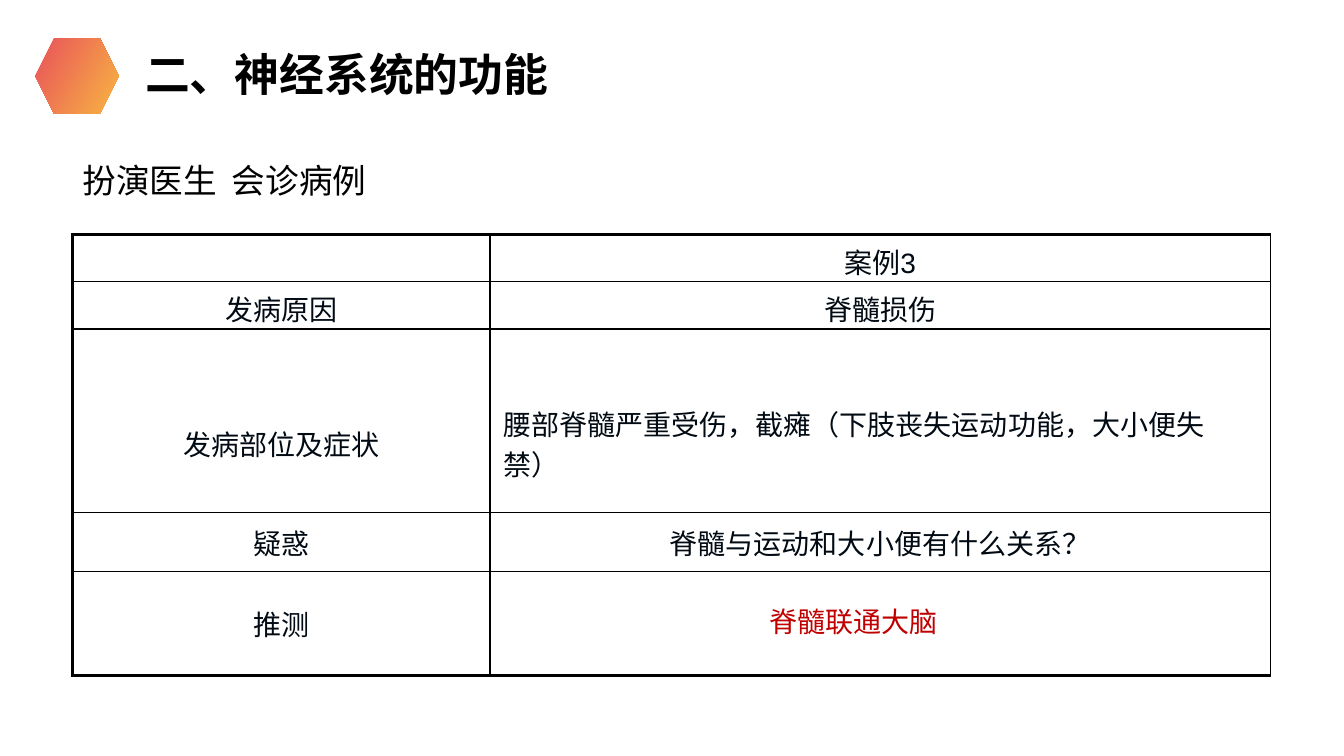
from lxml import etree
from pptx import Presentation
from pptx.dml.color import RGBColor
from pptx.enum.shapes import MSO_SHAPE
from pptx.enum.text import MSO_ANCHOR, PP_ALIGN
from pptx.oxml.ns import qn
from pptx.util import Inches, Pt

CENTER, LEFT = PP_ALIGN.CENTER, PP_ALIGN.LEFT
MIDDLE = MSO_ANCHOR.MIDDLE
HEXAGON = MSO_SHAPE.HEXAGON

FONT = "Arial"
COLORS = {
    "black": "000000",
    "ink": "020B14",
    "red": "C00000",
    "coral": "E8525B",
    "amber": "F8B542",
}
TEXTS = [
    ("二、神经系统的功能", (1.34, 0.41, 4.35, 0.64), 32, "black", True),
    ("扮演医生  会诊病例", (0.72, 1.54, 3.15, 0.5), 24, "black", False),
    ("脊髓联通大脑", (7.53, 5.95, 1.88, 0.5), 20, "red", False),
]
CASE_ROWS = [
    ("", "案例3"),
    ("发病原因", "脊髓损伤"),
    ("发病部位及症状", "腰部脊髓严重受伤，截瘫（下肢丧失运动功能，大小便失禁）"),
    ("疑惑", "脊髓与运动和大小便有什么关系？"),
    ("推测", ""),
]
TABLE_LEFT, TABLE_TOP = 0.72, 2.33
COLUMN_WIDTHS = [4.14, 7.74]
ROW_HEIGHTS = [0.46, 0.47, 1.82, 0.59, 1.03]
ROW_MARGINS = [(0.06, 0), (0.06, 0), (0.5, 0.05), (0.05, 0.05), (0.05, 0.05)]
SYMPTOM_CELL = (2, 1)
THIN, THICK = 1, 2.25


def color(name):
    return RGBColor.from_string(COLORS[name])


def add_run(paragraph, text, size, color_name, bold=False):
    run = paragraph.add_run()
    run.text = text
    run.font.name = FONT
    run.font.size = Pt(size)
    run.font.bold = bold
    run.font.color.rgb = color(color_name)


def add_text(slide, text, box, size, color_name, bold):
    frame = slide.shapes.add_textbox(*map(Inches, box)).text_frame
    frame.word_wrap = False
    add_run(frame.paragraphs[0], text, size, color_name, bold)


def set_borders(cell, widths):
    properties = cell._tc.get_or_add_tcPr()
    for side, width in widths.items():
        line = etree.SubElement(properties, qn(f"a:ln{side}"), w=str(Pt(width)))
        fill = etree.SubElement(line, qn("a:solidFill"))
        etree.SubElement(fill, qn("a:srgbClr"), val=COLORS["black"])


def fill_cell(cell, row, column, text):
    set_borders(cell, {
        "L": THICK if column == 0 else THIN,
        "R": THIN,
        "T": THICK if row == 0 else THIN,
        "B": THICK if row == len(CASE_ROWS) - 1 else THIN,
    })
    cell.fill.background()
    cell.vertical_anchor = MIDDLE
    cell.margin_left = cell.margin_right = Inches(0.13)
    top, bottom = ROW_MARGINS[row]
    cell.margin_top, cell.margin_bottom = Inches(top), Inches(bottom)
    if text:
        paragraph = cell.text_frame.paragraphs[0]
        paragraph.alignment = LEFT if (row, column) == SYMPTOM_CELL else CENTER
        add_run(paragraph, text, 20, "ink")


def add_case_table(slide):
    table = slide.shapes.add_table(
        len(ROW_HEIGHTS), len(COLUMN_WIDTHS),
        Inches(TABLE_LEFT), Inches(TABLE_TOP),
        Inches(sum(COLUMN_WIDTHS)), Inches(sum(ROW_HEIGHTS)),
    ).table
    table.first_row = table.horz_banding = False
    for column, width in zip(table.columns, COLUMN_WIDTHS):
        column.width = Inches(width)
    for row, height in zip(table.rows, ROW_HEIGHTS):
        row.height = Inches(height)
    for row, texts in enumerate(CASE_ROWS):
        for column, text in enumerate(texts):
            fill_cell(table.cell(row, column), row, column, text)


def add_hexagon(slide):
    hexagon = slide.shapes.add_shape(
        HEXAGON, Inches(0.35), Inches(0.38), Inches(0.83), Inches(0.75))
    hexagon.shadow.inherit = False
    hexagon.line.fill.background()
    hexagon.fill.gradient()
    hexagon.fill.gradient_angle = 330
    for stop, name in zip(hexagon.fill.gradient_stops, ("coral", "amber")):
        stop.color.rgb = color(name)


def main():
    presentation = Presentation()
    presentation.slide_width = Inches(13.33)
    presentation.slide_height = Inches(7.5)
    slide = presentation.slides.add_slide(presentation.slide_layouts[6])
    add_hexagon(slide)
    add_case_table(slide)
    for item in TEXTS:
        add_text(slide, *item)
    presentation.save("out.pptx")


if __name__ == "__main__":
    main()
